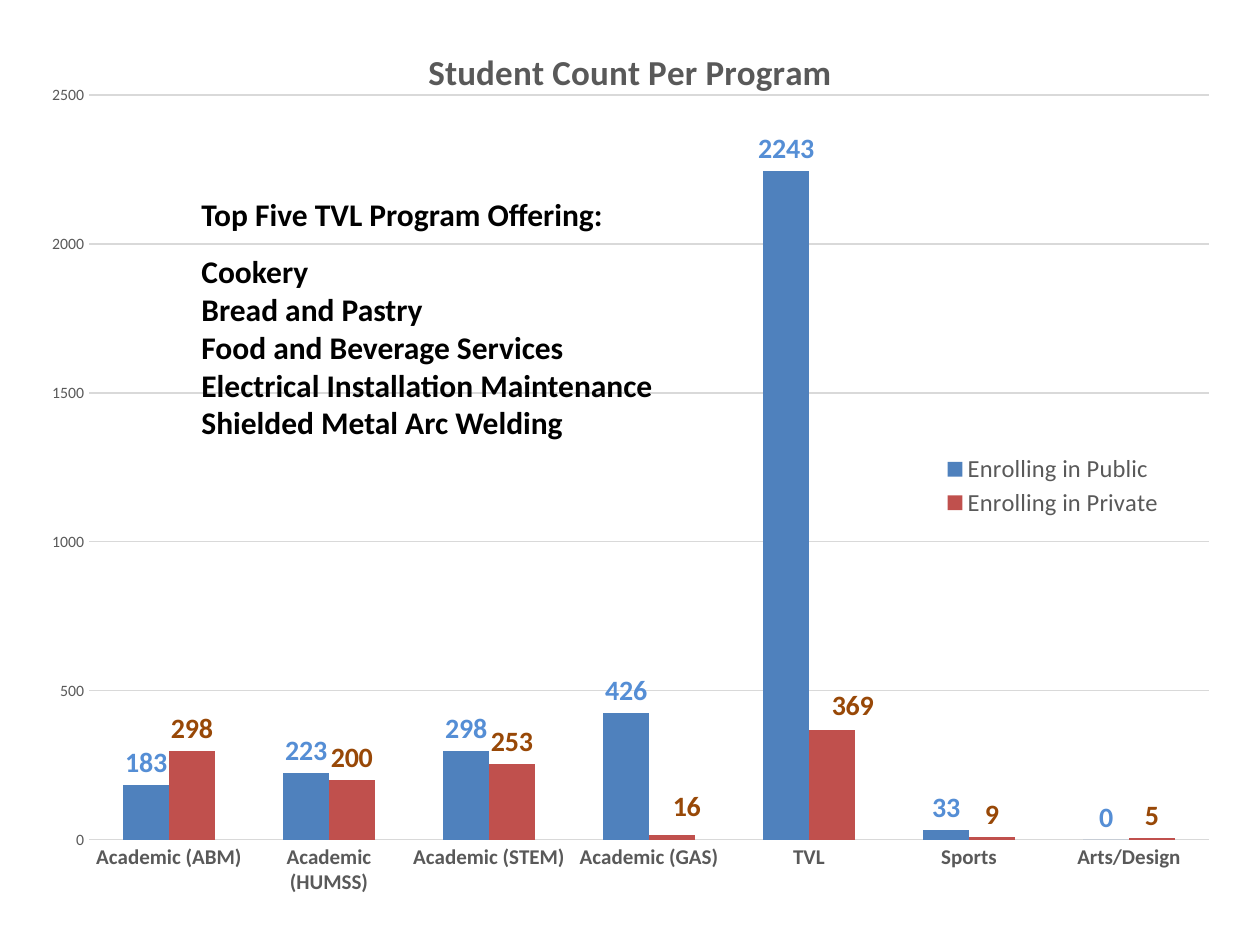
from lxml.etree import SubElement
from pptx import Presentation
from pptx.chart.data import CategoryChartData
from pptx.dml.color import RGBColor
from pptx.enum.chart import XL_CHART_TYPE, XL_LABEL_POSITION, XL_LEGEND_POSITION, XL_TICK_MARK
from pptx.oxml.ns import qn
from pptx.util import Pt

PX = 914400 // 126
FACE = "Calibri"
BLACK = RGBColor(0, 0, 0)
GRAY = RGBColor(0x59, 0x59, 0x59)
GRID = RGBColor(0xD9, 0xD9, 0xD9)
BLUE = RGBColor(0x4F, 0x81, 0xBD)
RED = RGBColor(0xC0, 0x50, 0x4D)
SKY = RGBColor(0x55, 0x8E, 0xD5)
BROWN = RGBColor(0x98, 0x48, 0x07)

TITLE = "Student Count Per Program"
CATS = ["Academic (ABM)", "Academic (HUMSS)", "Academic (STEM)", "Academic (GAS)",
        "TVL", "Sports", "Arts/Design"]
SERIES = [
    ("Enrolling in Public", [183, 223, 298, 426, 2243, 33, 0], BLUE, SKY, {}),
    ("Enrolling in Private", [298, 200, 253, 16, 369, 9, 5], RED, BROWN,
     {3: (15, -6), 4: (21, -2)}),
]
NOTES = [
    ((189, 189, 431, 50), ["Top Five TVL Program Offering:"]),
    ((189, 246, 536, 204), ["Cookery", "Bread and Pastry", "Food and Beverage Services",
                            "Electrical Installation Maintenance",
                            "Shielded Metal Arc Welding"]),
]
FRAME = (32, 21, 1197, 892)
PLOT = (89, 95, 1120, 745)
HEAD = (422, 41)
KEY = (940, 451, 226, 70)


def style(font, size, color, bold=False):
    font.name, font.size, font.bold = FACE, Pt(size), bold
    font.color.rgb = color


def place(node, spot, index, inner=False, shift=False):
    for old in node.findall(qn("c:layout")):
        node.remove(old)
    lay = SubElement(node, qn("c:layout"))
    node.insert(index, lay)
    box = SubElement(lay, qn("c:manualLayout"))
    vals = []
    if inner:
        vals.append(("layoutTarget", "inner"))
    if not shift:
        vals += [("xMode", "edge"), ("yMode", "edge")]
    for i, (tag, px) in enumerate(zip("xywh", spot)):
        base = 0 if shift or i > 1 else FRAME[i]
        vals.append((tag, f"{(px - base) / FRAME[2 + i % 2]:.4f}"))
    for tag, val in vals:
        SubElement(box, qn("c:" + tag)).set("val", val)


def draw_chart(slide):
    data = CategoryChartData()
    data.categories = CATS
    for name, vals, *_ in SERIES:
        data.add_series(name, vals)
    chart = slide.shapes.add_chart(
        XL_CHART_TYPE.COLUMN_CLUSTERED, *[n * PX for n in FRAME], data).chart
    style(chart.font, 10, BLACK)

    chart.has_title = True
    run = chart.chart_title.text_frame.paragraphs[0].add_run()
    run.text = TITLE
    style(run.font, 20, GRAY, True)

    chart.has_legend = True
    chart.legend.position = XL_LEGEND_POSITION.BOTTOM
    chart.legend.include_in_layout = False
    style(chart.legend.font, 14, GRAY)

    for axis, size, bold in ((chart.category_axis, 12, True), (chart.value_axis, 9, False)):
        axis.major_tick_mark = axis.minor_tick_mark = XL_TICK_MARK.NONE
        axis.format.line.fill.background()
        style(axis.tick_labels.font, size, GRAY, bold)
    axis = chart.value_axis
    axis.minimum_scale, axis.maximum_scale, axis.major_unit = 0, 2500, 500
    line = axis.major_gridlines.format.line
    line.color.rgb, line.width = GRID, Pt(0.75)

    plot = chart.plots[0]
    plot.gap_width, plot.overlap, plot.vary_by_categories = 150, 0, False
    for bars, (_, _, fill, ink, moves) in zip(plot.series, SERIES):
        bars.format.fill.solid()
        bars.format.fill.fore_color.rgb = fill
        bars.invert_if_negative = False
        tags = bars.data_labels
        tags.show_value = True
        tags.position = XL_LABEL_POSITION.OUTSIDE_END
        style(tags.font, 16, ink, True)
        for i in moves:
            tag = bars.points[i].data_label
            style(tag.font, 16, ink, True)
            tag.position = XL_LABEL_POSITION.OUTSIDE_END
        nodes = chart.element.xpath(f".//c:ser[c:idx/@val='{bars.index}']//c:dLbl")
        for node, move in zip(nodes, moves.values()):
            place(node, move, 1, shift=True)

    for tag, spot, index in (("title", HEAD, 1), ("plotArea", PLOT, 0), ("legend", KEY, 1)):
        node = chart.element.find(qn("c:chart")).find(qn("c:" + tag))
        place(node, spot, index, inner=tag == "plotArea")


def draw_note(slide, spot, lines):
    frame = slide.shapes.add_textbox(*[n * PX for n in spot]).text_frame
    frame.word_wrap = True
    for i, text in enumerate(lines):
        para = frame.add_paragraph() if i else frame.paragraphs[0]
        run = para.add_run()
        run.text = text
        style(run.font, 18, BLACK, True)


def main():
    deck = Presentation()
    deck.slide_width, deck.slide_height = 1260 * PX, 945 * PX
    slide = deck.slides.add_slide(deck.slide_layouts[6])
    draw_chart(slide)
    for spot, lines in NOTES:
        draw_note(slide, spot, lines)
    deck.save("out.pptx")


if __name__ == "__main__":
    main()
